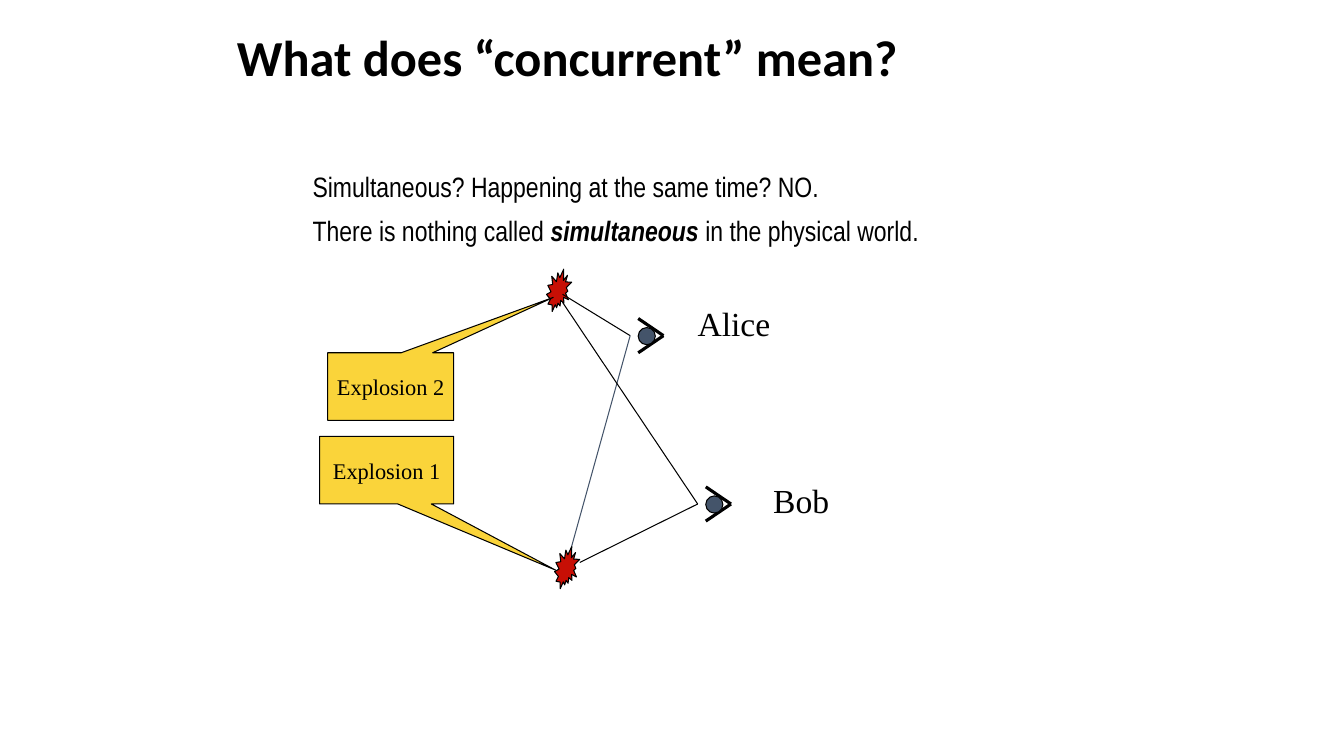
from dataclasses import dataclass

from lxml import etree
from pptx import Presentation
from pptx.dml.color import RGBColor
from pptx.enum.shapes import MSO_CONNECTOR, MSO_SHAPE
from pptx.enum.text import MSO_ANCHOR, MSO_AUTO_SIZE, PP_ALIGN
from pptx.oxml.ns import qn
from pptx.util import Inches, Pt

LINE = MSO_CONNECTOR.STRAIGHT
SEAL, OVAL = MSO_SHAPE.EXPLOSION2, MSO_SHAPE.OVAL
CALLOUT = MSO_SHAPE.RECTANGULAR_CALLOUT
MIDDLE, TOP = MSO_ANCHOR.MIDDLE, MSO_ANCHOR.TOP
LEFT, CENTER = PP_ALIGN.LEFT, PP_ALIGN.CENTER
FIXED, GROW = MSO_AUTO_SIZE.NONE, MSO_AUTO_SIZE.SHAPE_TO_FIT_TEXT


@dataclass(frozen=True)
class Theme:
    """Colours, fonts and sizes of the slide."""
    ink: str = "000000"
    slate: str = "44546A"
    red: str = "C70F05"
    gold: str = "FAD43A"
    head: str = "Calibri"
    body: str = "Arial Narrow"
    serif: str = "Times New Roman"
    title: int = 36
    text: int = 20
    name: int = 24
    tag: int = 16
    thin: float = 0.75
    bold: float = 2.25


THEME = Theme()


def color(code):
    """Turn a hex code into a colour."""
    return RGBColor.from_string(code)


def add_run(para, text, font, size, bold=False, italic=False):
    """Append one formatted run."""
    run = para.add_run()
    run.text = text
    run.font.name, run.font.size = font, Pt(size)
    run.font.bold, run.font.italic = bold, italic
    run.font.color.rgb = color(THEME.ink)


def place(shape, left, top, width, height):
    """Move and size a placeholder."""
    shape.left, shape.top = Inches(left), Inches(top)
    shape.width, shape.height = Inches(width), Inches(height)


def add_title(slide, text):
    """Fill the title placeholder."""
    title = slide.shapes.title
    place(title, 2.25, 0, 8.93, 1.19)
    frame = title.text_frame
    frame.auto_size, frame.vertical_anchor = FIXED, MIDDLE
    para = frame.paragraphs[0]
    para.alignment, para.line_spacing = LEFT, 0.9
    add_run(para, text, THEME.head, THEME.title, bold=True)


def add_body(slide, rows):
    """Fill the body placeholder, one paragraph a row."""
    body = slide.placeholders[1]
    place(body, 3, 1.67, 6.83, 4.5)
    frame = body.text_frame
    frame.auto_size, frame.vertical_anchor = FIXED, TOP
    for i, row in enumerate(rows):
        para = frame.add_paragraph() if i else frame.paragraphs[0]
        para.alignment, para.line_spacing = LEFT, 0.9
        para.space_before = Pt(10)
        props = para._p.get_or_add_pPr()
        props.set("marL", str(Inches(0.25)))
        props.set("indent", str(-Inches(0.25)))
        etree.SubElement(props, qn("a:buNone"))
        for text, strong in row:
            add_run(para, text, THEME.body, THEME.text, strong, strong)


def add_form(slide, kind, box, fill):
    """Add a filled shape with a thin outline."""
    shape = slide.shapes.add_shape(kind, *map(Inches, box))
    shape.shadow.inherit = False
    shape.fill.solid()
    shape.fill.fore_color.rgb = color(fill)
    shape.line.color.rgb = color(THEME.ink)
    shape.line.width = Pt(THEME.thin)
    return shape


def add_line(slide, start, end, tint=THEME.ink, width=THEME.thin):
    """Draw a straight line between two points."""
    line = slide.shapes.add_connector(LINE, *map(Inches, start + end))
    line.line.color.rgb = color(tint)
    line.line.width = Pt(width)
    etree.SubElement(line._element.spPr, qn("a:effectLst"))


def add_eye(slide, left, mid):
    """Draw an eye looking left."""
    tip = (left + 0.25, mid)
    add_line(slide, (left, mid - 0.17), tip, width=THEME.bold)
    add_line(slide, tip, (left, mid + 0.17), width=THEME.bold)
    add_form(slide, OVAL, (left, mid - 0.08, 0.17, 0.17), THEME.slate)


def add_name(slide, text, box):
    """Label a viewer."""
    label = slide.shapes.add_textbox(*map(Inches, box))
    frame = label.text_frame
    frame.word_wrap, frame.auto_size = False, GROW
    add_run(frame.paragraphs[0], text, THEME.serif, THEME.name)


def add_callout(slide, text, box, tip):
    """Add a callout pointing at a blast."""
    shape = add_form(slide, CALLOUT, box, THEME.gold)
    shape.adjustments[0], shape.adjustments[1] = tip
    frame = shape.text_frame
    frame.word_wrap, frame.vertical_anchor = False, MIDDLE
    para = frame.paragraphs[0]
    para.alignment = CENTER
    add_run(para, text, THEME.serif, THEME.tag)


def main():
    """Build and save the slide."""
    deck = Presentation()
    deck.slide_width, deck.slide_height = Inches(13.33), Inches(7.5)
    slide = deck.slides.add_slide(deck.slide_layouts[1])
    add_title(slide, "What does “concurrent” mean?")
    add_body(slide, [
        [("Simultaneous? Happening at the same time? NO.", False)],
        [("There is nothing called ", False), ("simultaneous", True),
         (" in the physical world.", False)],
    ])
    for left, top in ((5.42, 2.67), (5.5, 5.42)):
        add_form(slide, SEAL, (left, top, 0.25, 0.42), THEME.red)
    add_eye(slide, 6.33, 3.33)
    add_eye(slide, 7, 5)
    alice, bob = (6.25, 3.33), (6.92, 5)
    add_line(slide, (5.58, 2.92), alice)
    add_line(slide, alice, (5.67, 5.42), THEME.slate)
    add_line(slide, (5.58, 3), bob)
    add_line(slide, bob, (5.75, 5.58))
    add_name(slide, "Alice", (6.82, 2.96, 0.92, 0.5))
    add_name(slide, "Bob", (7.57, 4.71, 0.76, 0.5))
    add_callout(slide, "Explosion 1", (3.17, 4.33, 1.33, 0.67), (1.26, 1.48))
    add_callout(slide, "Explosion 2", (3.25, 3.5, 1.25, 0.67), (1.29, -1.32))
    deck.save("out.pptx")


if __name__ == "__main__":
    main()
